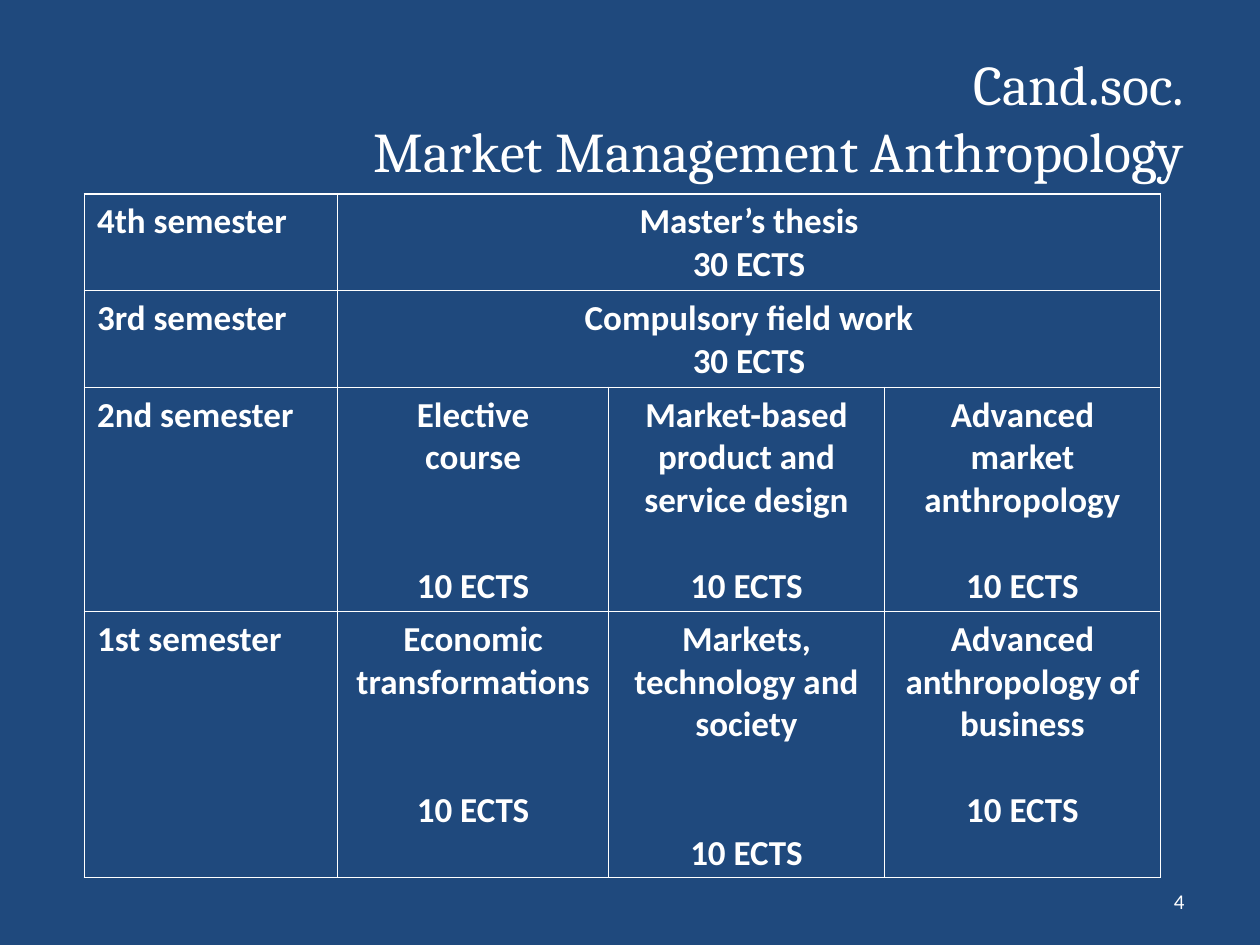
from dataclasses import dataclass

import lxml.etree
import pptx
import pptx.dml.color
import pptx.enum.text
import pptx.oxml.ns
import pptx.util

Inches = pptx.util.Inches
Pt = pptx.util.Pt
RGBColor = pptx.dml.color.RGBColor
Align = pptx.enum.text.PP_ALIGN
Anchor = pptx.enum.text.MSO_ANCHOR
qn = pptx.oxml.ns.qn


@dataclass(frozen=True)
class Theme:
    background: RGBColor = RGBColor(0x1F, 0x49, 0x7D)
    ink: RGBColor = RGBColor(0xFF, 0xFF, 0xFF)
    heading_font: str = "Cambria"
    body_font: str = "Calibri"
    title_size: int = 32
    table_size: int = 20
    number_size: int = 12
    line_pitch: float = 24.4  # one table line, in points
    border_width: int = 1


@dataclass(frozen=True)
class Course:
    name: str
    ects: int
    gap_lines: int = 0  # empty lines between the name and its credits
    span: int = 1


@dataclass(frozen=True)
class Semester:
    label: str
    height: float
    courses: tuple[Course, ...]


THEME = Theme()
COLUMN_WIDTHS = (2.01, 2.15, 2.19, 2.19)
SEMESTERS = (
    Semester("4th semester", 0.72, (Course("Master’s thesis", 30, span=3),)),
    Semester("3rd semester", 0.72, (Course("Compulsory field work", 30, span=3),)),
    Semester("2nd semester", 1.76, (
        Course("Elective\ncourse", 10, 2),
        Course("Market-based product and service design", 10, 1),
        Course("Advanced market anthropology", 10, 1),
    )),
    Semester("1st semester", 2.07, (
        Course("Economic transformations", 10, 2),
        Course("Markets, technology and society", 10, 2),
        Course("Advanced anthropology of business", 10, 1),
    )),
)


def style_text(frame, align, font: str, size: int, bold: bool = False) -> None:
    for paragraph in frame.paragraphs:
        paragraph.alignment = align
        for run in paragraph.runs:
            run.font.name = font
            run.font.size = Pt(size)
            run.font.bold = bold
            run.font.color.rgb = THEME.ink


def add_right_text(slide, text: str, left: float, top: float, width: float,
                   height: float, font: str, size: int) -> None:
    box = slide.shapes.add_textbox(Inches(left), Inches(top), Inches(width), Inches(height))
    frame = box.text_frame
    frame.word_wrap = True
    frame.vertical_anchor = Anchor.MIDDLE
    frame.text = text
    style_text(frame, Align.RIGHT, font, size)


def draw_borders(cell) -> None:
    properties = cell._tc.get_or_add_tcPr()
    for side in ("a:lnL", "a:lnR", "a:lnT", "a:lnB"):
        line = lxml.etree.SubElement(properties, qn(side), w=str(Pt(THEME.border_width)))
        fill = lxml.etree.SubElement(line, qn("a:solidFill"))
        lxml.etree.SubElement(fill, qn("a:srgbClr"), val=str(THEME.ink))


def fill_cell(cell, text: str, align) -> None:
    cell.text_frame.text = text
    style_text(cell.text_frame, align, THEME.body_font, THEME.table_size, bold=True)


def add_programme(slide, left: float, top: float) -> None:
    heights = [semester.height for semester in SEMESTERS]
    table = slide.shapes.add_table(
        len(heights), len(COLUMN_WIDTHS), Inches(left), Inches(top),
        Inches(sum(COLUMN_WIDTHS)), Inches(sum(heights))).table
    table.first_row = table.horz_banding = False
    for column, width in zip(table.columns, COLUMN_WIDTHS):
        column.width = Inches(width)
    for cell in table.iter_cells():
        draw_borders(cell)
        cell.fill.background()

    for row, semester in enumerate(SEMESTERS):
        table.rows[row].height = Inches(semester.height)
        fill_cell(table.cell(row, 0), semester.label, Align.LEFT)
        column = 1
        for course in semester.courses:
            cell = table.cell(row, column)
            if course.span > 1:
                cell.merge(table.cell(row, column + course.span - 1))
            fill_cell(cell, f"{course.name}\n{course.ects} ECTS", Align.CENTER)
            if course.gap_lines:
                credits = cell.text_frame.paragraphs[-1]
                credits.space_before = Pt(course.gap_lines * THEME.line_pitch)
            column += course.span


def main() -> None:
    presentation = pptx.Presentation()
    presentation.slide_width = Inches(10)
    presentation.slide_height = Inches(7.5)
    slide = presentation.slides.add_slide(presentation.slide_layouts[6])
    slide.background.fill.solid()
    slide.background.fill.fore_color.rgb = THEME.background

    # Title
    add_right_text(slide, "Cand.soc.\vMarket Management Anthropology",
                   0.5, 0.3, 9, 1.25, THEME.heading_font, THEME.title_size)
    # Slide number
    add_right_text(slide, "4", 7.17, 6.95, 2.33, 0.4, THEME.body_font, THEME.number_size)
    # Semester table
    add_programme(slide, 0.67, 1.54)

    presentation.save("out.pptx")


if __name__ == "__main__":
    main()
